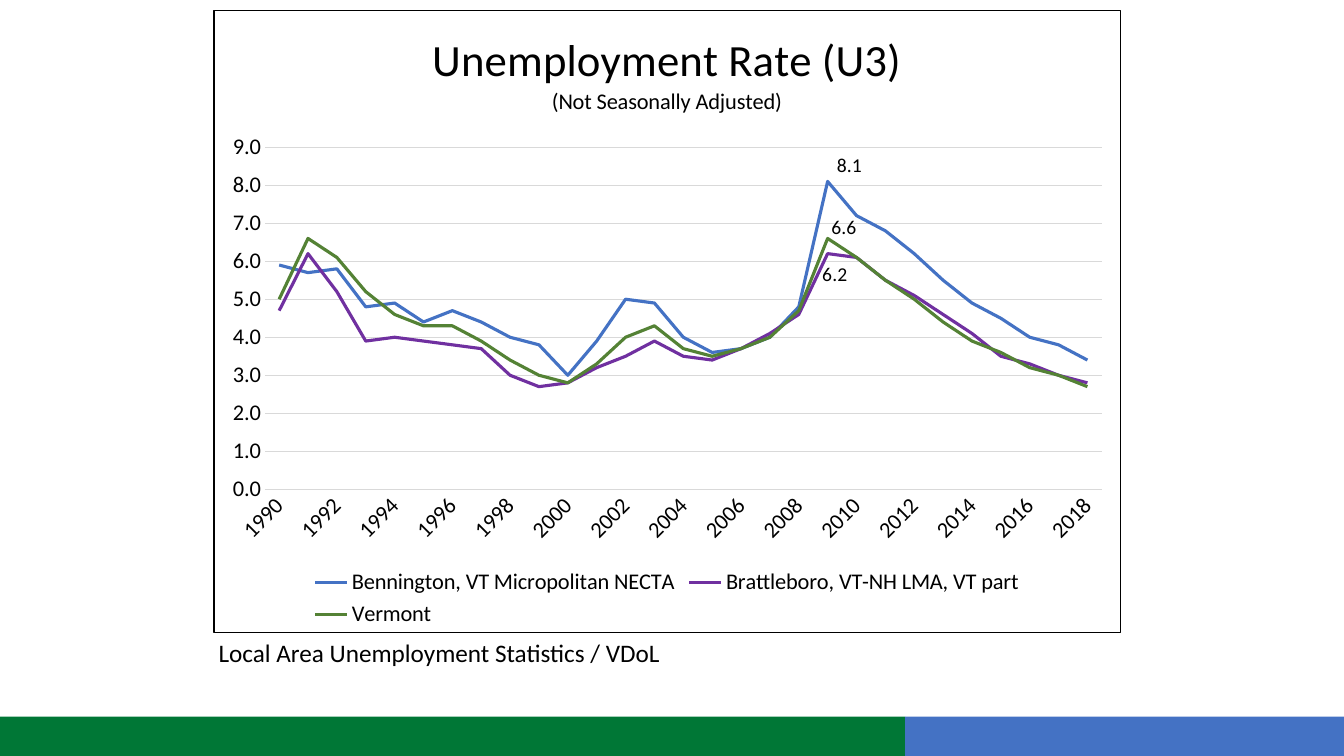
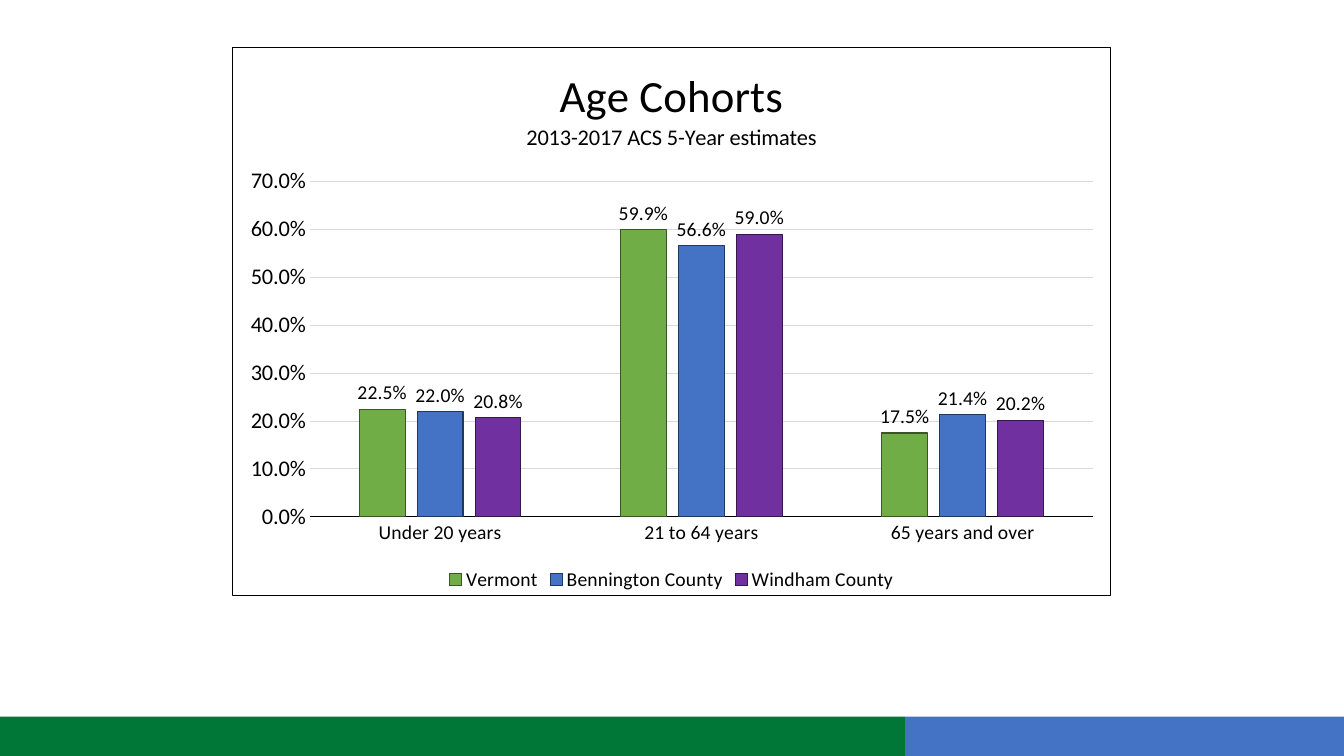
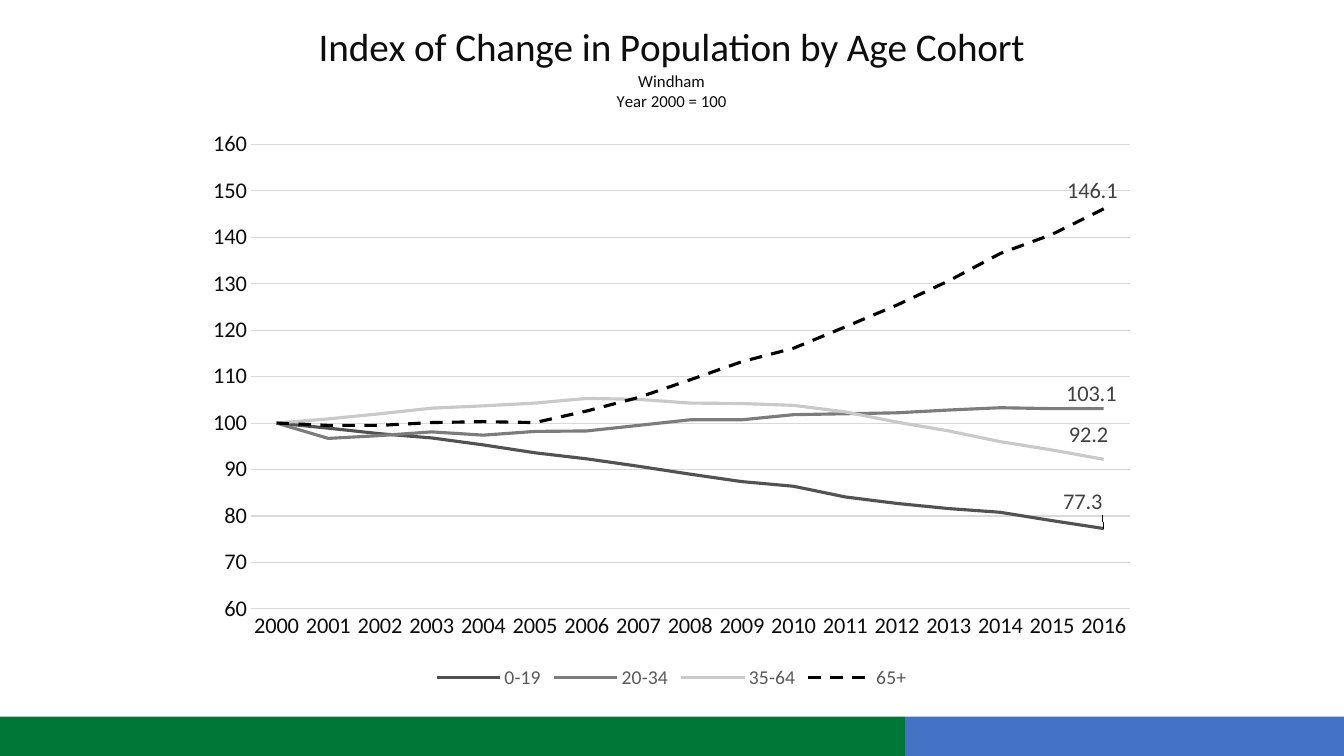
from dataclasses import dataclass

from pptx import Presentation
from pptx.chart.data import CategoryChartData
from pptx.dml.color import RGBColor
from pptx.enum.chart import XL_CHART_TYPE, XL_LABEL_POSITION, XL_LEGEND_POSITION, XL_TICK_MARK
from pptx.enum.dml import MSO_LINE
from pptx.enum.shapes import MSO_SHAPE
from pptx.oxml import parse_xml
from pptx.oxml.ns import nsdecls
from pptx.util import Cm, Pt

LINE, COLUMN = XL_CHART_TYPE.LINE, XL_CHART_TYPE.COLUMN_CLUSTERED
ABOVE, BELOW = XL_LABEL_POSITION.ABOVE, XL_LABEL_POSITION.BELOW
OUTSIDE_END = XL_LABEL_POSITION.OUTSIDE_END
BOTTOM, NO_TICK = XL_LEGEND_POSITION.BOTTOM, XL_TICK_MARK.NONE
DASH, RECTANGLE = MSO_LINE.DASH, MSO_SHAPE.RECTANGLE


@dataclass(frozen=True)
class Theme:
    font: str = "Calibri"
    black: str = "000000"
    ink: str = "0D0D0D"
    label_grey: str = "404040"
    legend_grey: str = "595959"
    grid: str = "D9D9D9"
    band_green: str = "007736"
    blue: str = "4472C4"
    purple: str = "7030A0"
    dark_green: str = "548235"
    green: str = "70AD47"
    title: int = 32
    small_title: int = 28
    source: int = 18
    body: int = 16
    label: int = 14
    note: int = 12
    hairline: float = 0.75
    curve: float = 2.25


T = Theme()


def set_font(font, size, color):
    for name, value in {"name": T.font, "size": Pt(size), "bold": False}.items():
        setattr(font, name, value)
    font.color.rgb = RGBColor.from_string(color)


def manual_layout(inner=False, **percent):
    """Build a c:layout from x, y, w and h in percent of the chart."""
    target = '<c:layoutTarget val="inner"/>' if inner else ""
    modes = "".join(f'<c:{k}Mode val="edge"/>' for k in "xy") if inner else ""
    sizes = "".join(f'<c:{k} val="{v / 100:.4f}"/>' for k, v in percent.items())
    return parse_xml(f'<c:layout {nsdecls("c")}><c:manualLayout>{target}{modes}{sizes}'
                     "</c:manualLayout></c:layout>")


# Series: name, values, colour, outline colour or dash, point label (position, x, y in percent)
charts = [
    {
        "type": LINE, "at": (5.38, 0.25, 22.86, 15.7), "plot": (5.6, 22, 92.4, 55),
        "title": [("Unemployment Rate (U3)", T.title), ("(Not Seasonally Adjusted)", T.body)],
        "categories": range(1990, 2019), "category_size": T.body, "rotation": -45,
        "scale": (0, 9, 1), "axis_format": "0.0", "format": "0.0",
        "ink": T.black, "axis_line": T.grid, "framed": True,
        "legend": (T.body, T.black), "label": (T.label, T.black),
        "series": [
            ("Bennington, VT Micropolitan NECTA",
             [5.9, 5.7, 5.8, 4.8, 4.9, 4.4, 4.7, 4.4, 4, 3.8, 3, 3.9, 5, 4.9, 4, 3.6, 3.7, 4,
              4.8, 8.1, 7.2, 6.8, 6.2, 5.5, 4.9, 4.5, 4, 3.8, 3.4],
             T.blue, None, (ABOVE, 2.4, 0)),
            ("Brattleboro, VT-NH LMA, VT part",
             [4.7, 6.2, 5.2, 3.9, 4, 3.9, 3.8, 3.7, 3, 2.7, 2.8, 3.2, 3.5, 3.9, 3.5, 3.4, 3.7,
              4.1, 4.6, 6.2, 6.1, 5.5, 5.1, 4.6, 4.1, 3.5, 3.3, 3, 2.8],
             T.purple, None, (BELOW, 0.8, 0.8)),
            ("Vermont",
             [5, 6.6, 6.1, 5.2, 4.6, 4.3, 4.3, 3.9, 3.4, 3, 2.8, 3.3, 4, 4.3, 3.7, 3.5, 3.7, 4,
              4.7, 6.6, 6.1, 5.5, 5, 4.4, 3.9, 3.6, 3.2, 3, 2.7],
             T.dark_green, None, (ABOVE, 1.8, 0.8)),
        ],
        "labelled_point": 19,
    },
    {
        "type": COLUMN, "at": (5.84, 1.19, 22.17, 13.84), "plot": (8.8, 24.4, 89.2, 61.2),
        "title": [("Age Cohorts", T.title), ("2013-2017 ACS 5-Year estimates", T.body)],
        "categories": ["Under 20 years", "21 to 64 years", "65 years and over"],
        "category_size": T.label, "rotation": 0,
        "scale": (0, 0.7, 0.1), "axis_format": "0.0%", "format": "0.0%",
        "ink": T.black, "axis_line": T.black, "framed": True,
        "legend": (T.label, T.black), "label": (T.label, T.black),
        "series": [
            ("Vermont", [0.225, 0.599, 0.175], T.green, "385723", None),
            ("Bennington County", [0.22, 0.566, 0.214], T.blue, "203864", None),
            ("Windham County", [0.208, 0.59, 0.202], T.purple, "36174D", None),
        ],
    },
    {
        "type": LINE, "at": (4.9, 0, 24.05, 17.48), "plot": (5.9, 20.8, 92.1, 67),
        "title": [("Index of Change in Population by Age Cohort", T.small_title),
                  ("Windham", T.note), ("Year 2000 = 100", T.note)],
        "categories": range(2000, 2017), "category_size": T.body, "rotation": 0,
        "scale": (60, 160, 10), "axis_format": "0", "format": "0.0",
        "ink": T.ink, "axis_line": T.grid, "framed": False,
        "legend": (T.label, T.legend_grey), "label": (T.body, T.label_grey),
        "series": [
            ("0-19",
             [100, 98.9, 97.7, 96.8, 95.3, 93.6, 92.3, 90.7, 89, 87.4, 86.4, 84.1, 82.7, 81.6,
              80.8, 79, 77.3],
             "525252", None, (ABOVE, -2.2, -1.3)),
            ("20-34",
             [100, 96.7, 97.3, 98.1, 97.4, 98.2, 98.3, 99.5, 100.7, 100.7, 101.8, 102, 102.2,
              102.8, 103.3, 103.1, 103.1],
             "7C7C7C", None, (ABOVE, -1.3, 0.4)),
            ("35-64",
             [100, 100.9, 102, 103.2, 103.7, 104.3, 105.3, 105.1, 104.3, 104.2, 103.8, 102.4,
              100.2, 98.3, 96, 94.2, 92.2],
             "C9C9C9", None, (ABOVE, -1.6, -0.9)),
            ("65+",
             [100, 99.5, 99.5, 100.1, 100.3, 100.1, 102.6, 105.5, 109.3, 113.2, 116.1, 120.7,
              125.4, 130.6, 136.5, 140.6, 146.1],
             T.black, DASH, (ABOVE, -1.2, 0)),
        ],
        "labelled_point": 16,
    },
]

prs = Presentation()
prs.slide_width, prs.slide_height = Cm(33.87), Cm(19.05)
blank = prs.slide_layouts[6]
slides = [prs.slides.add_slide(blank) for _ in charts]

# The footer bands live on the master, so every slide shows them
for left, width, color in ((0, 22.81, T.band_green), (22.81, 11.06, T.blue)):
    band = slides[0].shapes.add_shape(RECTANGLE, Cm(left), Cm(18.06), Cm(width), Cm(0.99))
    band.shadow.inherit = False
    band.fill.solid()
    band.fill.fore_color.rgb = RGBColor.from_string(color)
    band.line.fill.background()
    prs.slide_master.shapes.element.append(band.element)

for s, c in zip(slides, charts):
    data = CategoryChartData(number_format=c["format"])
    data.categories = [str(category) for category in c["categories"]]
    for name, values, *_ in c["series"]:
        data.add_series(name, values)
    chart = s.shapes.add_chart(c["type"], *map(Cm, c["at"]), data).chart
    set_font(chart.font, T.note, T.black)

    # Frame and plot area
    paint = "<a:noFill/><a:ln><a:noFill/></a:ln>"
    if c["framed"]:
        paint = ('<a:solidFill><a:srgbClr val="FFFFFF"/></a:solidFill>'
                 f'<a:ln w="{Pt(T.hairline)}"><a:solidFill><a:srgbClr val="{T.black}"/>'
                 "</a:solidFill></a:ln>")
    frame = parse_xml(f'<c:spPr {nsdecls("c", "a")}>{paint}</c:spPr>')
    chart.element.xpath("c:chart")[0].addnext(frame)
    plot_area = chart.element.xpath(".//c:plotArea")[0]
    for old in plot_area.xpath("c:layout"):
        plot_area.remove(old)
    plot_area.insert(0, manual_layout(inner=True, **dict(zip("xywh", c["plot"]))))

    # Title
    tf = chart.chart_title.text_frame
    chart.chart_title.include_in_layout = False
    for i, (text, size) in enumerate(c["title"]):
        p = tf.paragraphs[0] if i == 0 else tf.add_paragraph()
        r = p.add_run()
        r.text = text
        set_font(r.font, size, c["ink"])

    # Axes
    low, high, step = c["scale"]
    category_axis, value_axis = chart.category_axis, chart.value_axis
    for axis, size in ((category_axis, c["category_size"]), (value_axis, T.body)):
        axis.major_tick_mark = axis.minor_tick_mark = NO_TICK
        set_font(axis.tick_labels.font, size, c["ink"])
    category_axis.format.line.width = Pt(T.hairline)
    category_axis.format.line.color.rgb = RGBColor.from_string(c["axis_line"])
    if c["rotation"]:
        body = category_axis.tick_labels.font and chart.element.xpath(".//c:catAx/c:txPr/a:bodyPr")[0]
        body.set("rot", str(c["rotation"] * 60000))
        body.set("vert", "horz")
    for name, value in {"minimum_scale": low, "maximum_scale": high, "major_unit": step}.items():
        setattr(value_axis, name, value)
    value_axis.format.line.fill.background()
    value_axis.tick_labels.number_format = c["axis_format"]
    value_axis.tick_labels.number_format_is_linked = False
    grid_line = value_axis.major_gridlines.format.line
    grid_line.width = Pt(T.hairline)
    grid_line.color.rgb = RGBColor.from_string(T.grid)

    # Legend
    chart.has_legend = True
    chart.legend.position = BOTTOM
    chart.legend.include_in_layout = False
    set_font(chart.legend.font, *c["legend"])

    # Series and labels
    plot = chart.plots[0]
    plot.vary_by_categories = False
    if c["type"] == COLUMN:
        plot.gap_width, plot.overlap = 219, -27
    for series, (_, _, color, outline, point_label) in zip(plot.series, c["series"]):
        line, labels = series.format.line, series.data_labels
        labels.show_value = c["type"] == COLUMN
        labels.number_format = c["format"]
        labels.number_format_is_linked = False
        set_font(labels.font, *c["label"])
        if c["type"] == COLUMN:
            series.format.fill.solid()
            series.format.fill.fore_color.rgb = RGBColor.from_string(color)
            line.width = Pt(T.hairline)
            line.color.rgb = RGBColor.from_string(outline)
            labels.position = OUTSIDE_END
        else:
            series.smooth = False
            line.width = Pt(T.curve)
            line.color.rgb = RGBColor.from_string(color)
            if outline:
                line.dash_style = outline
            label = series.points[c["labelled_point"]].data_label
            set_font(label.font, *c["label"])
            label.position = point_label[0]
    moves = [entry[-1] for entry in c["series"] if entry[-1]]
    for label_xml, (_, x, y) in zip(chart.element.xpath(".//c:dLbl"), moves):
        label_xml.insert(1, manual_layout(x=x, y=y))

box = slides[0].shapes.add_textbox(Cm(5.26), Cm(15.93), Cm(14.83), Cm(1.02))
tf = box.text_frame
tf.word_wrap = True
r = tf.paragraphs[0].add_run()
r.text = "Local Area Unemployment Statistics / VDoL"
set_font(r.font, T.source, T.black)

prs.save("out.pptx")
